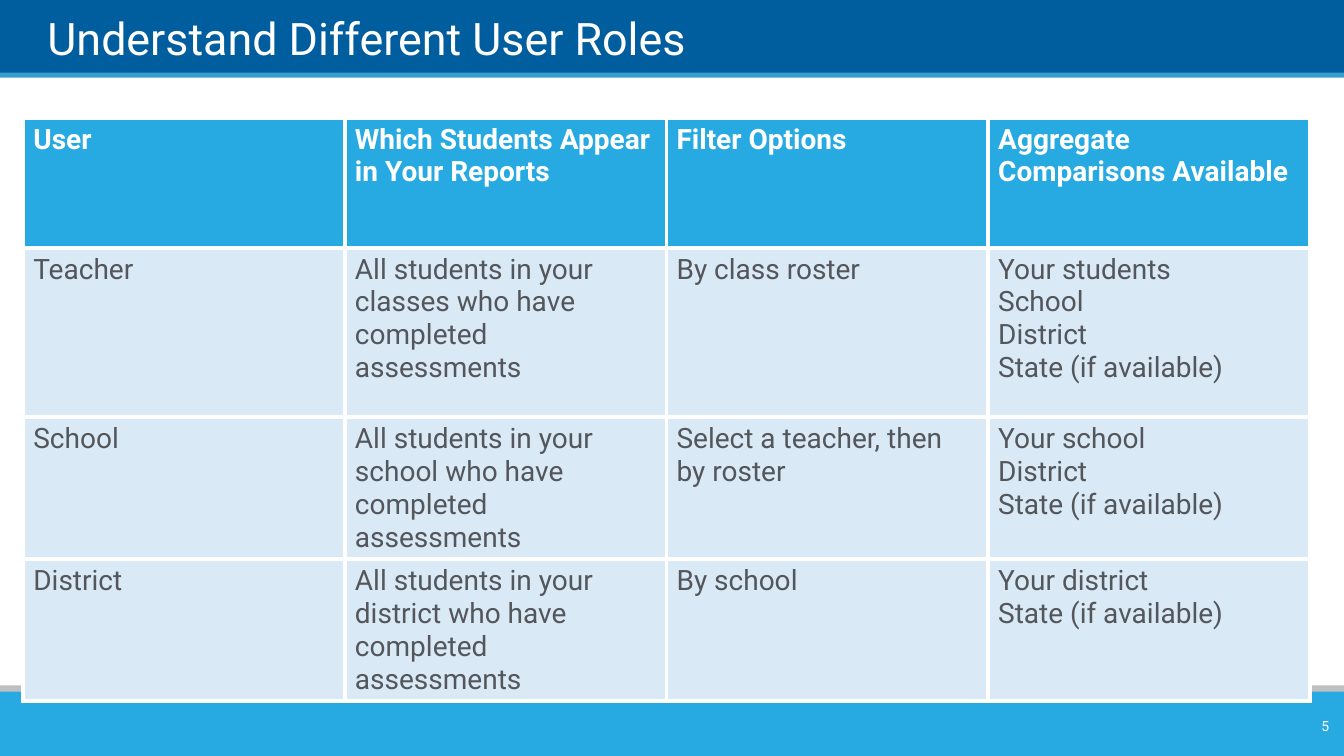
"""Build the slide that compares user roles."""
from dataclasses import dataclass

import pptx
import pptx.dml.color
import pptx.enum.shapes
import pptx.enum.text
import pptx.oxml
import pptx.oxml.ns
import pptx.util


@dataclass(frozen=True)
class Theme:
    font: str = "Roboto"
    navy: str = "005E9E"
    blue: str = "35A0CE"
    grey: str = "BFBFBF"
    sky: str = "27AAE1"
    pale: str = "DAE9F6"
    ink: str = "53565A"
    white: str = "FFFFFF"
    title_size: int = 32
    table_size: int = 20
    number_size: int = 10
    border: int = 3


@dataclass(frozen=True)
class Box:
    """Position and size in percent of the slide's width and height."""
    left: float
    top: float
    width: float
    height: float

    def emu(self) -> tuple[int, int, int, int]:
        return across(self.left), down(self.top), across(self.width), down(self.height)


@dataclass(frozen=True)
class Band:
    top: float
    height: float
    color: str


@dataclass(frozen=True)
class Row:
    height: float
    cells: tuple[str, ...]


THEME = Theme()
SLIDE_W = pptx.util.Inches(13.33)
SLIDE_H = pptx.util.Inches(7.5)

BANDS = (
    Band(-0.13, 10, THEME.navy),
    Band(9.6, 0.67, THEME.blue),
    Band(90.67, 1.87, THEME.grey),
    Band(91.47, 8.53, THEME.sky),
)
TITLE_BOX = Box(3.53, 0.93, 93.25, 7.6)
NUMBER_BOX = Box(93.85, 94, 5.78, 4)
ROWS = (
    Row(17.2, ("User", "Which Students Appear in Your Reports", "Filter Options",
               "Aggregate Comparisons Available")),
    Row(22.4, ("Teacher", "All students in your classes who have completed assessments",
               "By class roster", "Your students\nSchool\nDistrict\nState (if available)")),
    Row(17.2, ("School", "All students in your school who have completed assessments",
               "Select a teacher, then by roster",
               "Your school\nDistrict\nState (if available)")),
    Row(12.8, ("District", "All students in your district who have completed assessments",
               "By school", "Your district\nState (if available)")),
)
TABLE_BOX = Box(1.73, 15.6, 95.72, sum(row.height for row in ROWS))


def across(percent: float) -> int:
    return round(SLIDE_W * percent / 100)


def down(percent: float) -> int:
    return round(SLIDE_H * percent / 100)


def rgb(color: str) -> pptx.dml.color.RGBColor:
    return pptx.dml.color.RGBColor.from_string(color)


def write(tf, text: str, size: int, color: str, bold: bool = False,
          align=pptx.enum.text.PP_ALIGN.LEFT) -> None:
    for i, line in enumerate(text.split("\n")):
        p = tf.add_paragraph() if i else tf.paragraphs[0]
        p.alignment = align
        r = p.add_run()
        r.text = line
        r.font.name = THEME.font
        r.font.size = pptx.util.Pt(size)
        r.font.bold = bold
        r.font.color.rgb = rgb(color)


def add_band(s, band: Band) -> None:
    sp = s.shapes.add_shape(pptx.enum.shapes.MSO_SHAPE.RECTANGLE,
                            *Box(0, band.top, 100, band.height).emu())
    sp.shadow.inherit = False
    sp.fill.solid()
    sp.fill.fore_color.rgb = rgb(band.color)
    sp.line.fill.background()


def add_title(s, text: str) -> None:
    sp = s.shapes.title
    s.shapes._spTree.append(sp._element)
    sp.left, sp.top, sp.width, sp.height = TITLE_BOX.emu()
    tf = sp.text_frame
    tf.margin_left = tf.margin_top = tf.margin_right = tf.margin_bottom = 0
    tf.auto_size = pptx.enum.text.MSO_AUTO_SIZE.NONE
    tf.vertical_anchor = pptx.enum.text.MSO_ANCHOR.BOTTOM
    write(tf, text, THEME.title_size, THEME.white)


def set_borders(cell) -> None:
    tc_pr = cell._tc.get_or_add_tcPr()
    for side in ("lnL", "lnR", "lnT", "lnB"):
        tc_pr.append(pptx.oxml.parse_xml(
            f'<a:{side} {pptx.oxml.ns.nsdecls("a")} w="{pptx.util.Pt(THEME.border)}">'
            f'<a:solidFill><a:srgbClr val="{THEME.white}"/></a:solidFill></a:{side}>'))


def add_roles(s) -> None:
    columns = len(ROWS[0].cells)
    table = s.shapes.add_table(len(ROWS), columns, *TABLE_BOX.emu()).table
    table.horz_banding = False
    for column in table.columns:
        column.width = across(TABLE_BOX.width / columns)
    for i, row in enumerate(ROWS):
        header = i == 0
        table.rows[i].height = down(row.height)
        for j, text in enumerate(row.cells):
            cell = table.cell(i, j)
            set_borders(cell)
            cell.fill.solid()
            cell.fill.fore_color.rgb = rgb(THEME.sky if header else THEME.pale)
            write(cell.text_frame, text, THEME.table_size,
                  THEME.white if header else THEME.ink, bold=header)


def add_number(s, text: str) -> None:
    tf = s.shapes.add_textbox(*NUMBER_BOX.emu()).text_frame
    tf.word_wrap = True
    tf.vertical_anchor = pptx.enum.text.MSO_ANCHOR.MIDDLE
    write(tf, text, THEME.number_size, THEME.white, align=pptx.enum.text.PP_ALIGN.RIGHT)


def main() -> None:
    prs = pptx.Presentation()
    prs.slide_width, prs.slide_height = SLIDE_W, SLIDE_H
    s = prs.slides.add_slide(prs.slide_layouts.get_by_name("Title Only"))
    for band in BANDS:
        add_band(s, band)
    add_title(s, "Understand Different User Roles")
    add_roles(s)
    add_number(s, "5")
    prs.save("out.pptx")


if __name__ == "__main__":
    main()
